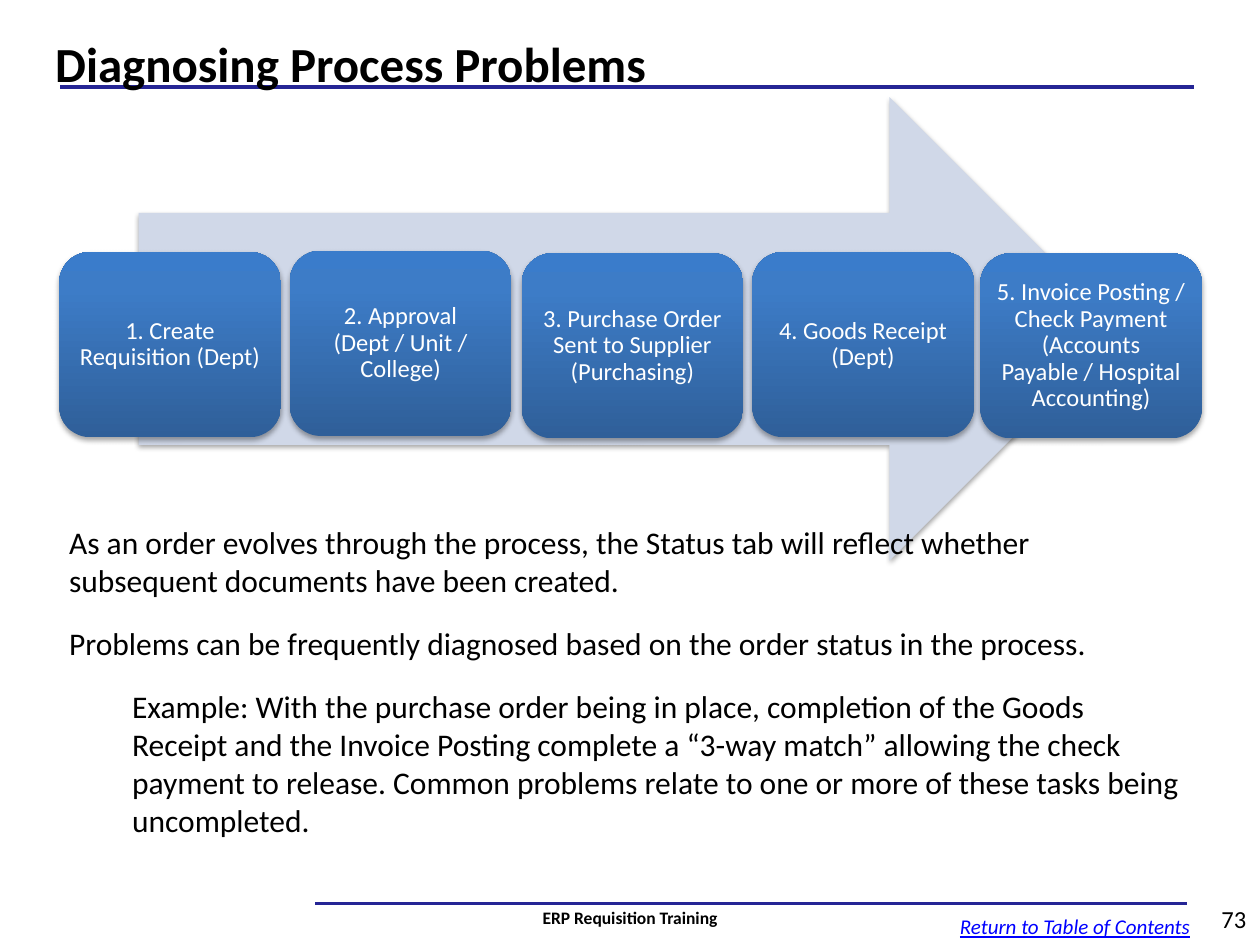
import copy

import lxml.etree
import pptx
import pptx.dml.color
import pptx.enum.shapes
import pptx.enum.text
import pptx.oxml.ns
import pptx.util

Inches = pptx.util.Inches
Pt = pptx.util.Pt
SHAPE = pptx.enum.shapes.MSO_SHAPE
ALIGN = pptx.enum.text.PP_ALIGN
ANCHOR = pptx.enum.text.MSO_ANCHOR

STEPS = [
    (0.47, 2.00, "1. Create Requisition (Dept)"),
    (2.30, 1.99, "2. Approval (Dept / Unit / College)"),
    (4.14, 2.01, "3. Purchase Order Sent to Supplier (Purchasing)"),
    (5.97, 2.00, "4. Goods Receipt (Dept)"),
    (7.78, 2.01, "5. Invoice Posting / Check Payment "
                 "(Accounts Payable / Hospital Accounting)"),
]
STEP_GRADIENT = [(0, "2F5F99"), (0.8, "3D7CC7"), (1, "3A7CCB")]
EXPLANATION = [
    ("As an order evolves through the process, the Status tab will reflect "
     "whether subsequent documents have been created.", 0),
    ("Problems can be frequently diagnosed based on the order status in the "
     "process.", 0),
    ("Example: With the purchase order being in place, completion of the Goods "
     "Receipt and the Invoice Posting complete a “3-way match” allowing the "
     "check payment to release. Common problems relate to one or more of these "
     "tasks being uncompleted.", 0.5),
]


def rgb(value):
    return pptx.dml.color.RGBColor.from_string(value)


def write(paragraph, text, size=18, color="000000", bold=False, italic=False,
          underline=False, align=ALIGN.LEFT, indent=0, before=0, spacing=None):
    if indent:
        paragraph._p.get_or_add_pPr().set("marL", str(Inches(indent)))
    paragraph.alignment = align
    paragraph.space_before = Pt(before)
    paragraph.line_spacing = spacing
    run = paragraph.add_run()
    run.text = text
    font = run.font
    font.name = "Calibri"
    font.size = Pt(size)
    font.bold = bold
    font.italic = italic
    font.underline = underline
    font.color.rgb = rgb(color)


def add_text(slide, box, text, anchor=ANCHOR.TOP, wrap=True, **style):
    frame = slide.shapes.add_textbox(*map(Inches, box)).text_frame
    frame.word_wrap = wrap
    frame.vertical_anchor = anchor
    write(frame.paragraphs[0], text, **style)
    return frame


def add_rule(slide, left, right, top, width):
    rule = slide.shapes.add_connector(
        pptx.enum.shapes.MSO_CONNECTOR.STRAIGHT,
        Inches(left), Inches(top), Inches(right), Inches(top))
    rule.line.color.rgb = rgb("252595")
    rule.line.width = Pt(width)
    lxml.etree.SubElement(rule._element.spPr, pptx.oxml.ns.qn("a:effectLst"))


def add_shadowed(slide, preset, box):
    shape = slide.shapes.add_shape(preset, *map(Inches, box))
    shape.line.fill.background()
    shape.shadow.inherit = False
    effects = shape._element.spPr.find(pptx.oxml.ns.qn("a:effectLst"))
    shadow = lxml.etree.SubElement(
        effects, pptx.oxml.ns.qn("a:outerShdw"), blurRad=str(Pt(3.1)),
        dist=str(Pt(1.8)), dir="5400000", rotWithShape="0")
    color = lxml.etree.SubElement(
        shadow, pptx.oxml.ns.qn("a:srgbClr"), val="000000")
    lxml.etree.SubElement(color, pptx.oxml.ns.qn("a:alpha"), val="35000")
    return shape


def add_arrow(slide):
    arrow = add_shadowed(slide, SHAPE.RIGHT_ARROW, (1.1, 0.77, 7.8, 3.68))
    arrow.fill.solid()
    arrow.fill.fore_color.rgb = rgb("D0D8E8")


def add_step(slide, left, top, text):
    step = add_shadowed(slide, SHAPE.ROUNDED_RECTANGLE, (left, top, 1.76, 1.47))
    step.fill.gradient()
    step.fill.gradient_angle = 90
    stops = next(step._element.spPr.iter(pptx.oxml.ns.qn("a:gsLst")))
    stops.append(copy.deepcopy(stops[0]))
    for stop, (position, color) in zip(step.fill.gradient_stops, STEP_GRADIENT):
        stop.position = position
        stop.color.rgb = rgb(color)
    frame = step.text_frame
    frame.word_wrap = True
    frame.vertical_anchor = ANCHOR.MIDDLE
    frame.margin_left = frame.margin_right = Inches(0.06)
    frame.margin_top = frame.margin_bottom = Inches(0.06)
    write(frame.paragraphs[0], text, size=14, color="FFFFFF",
          align=ALIGN.CENTER, spacing=0.9)


def add_explanation(slide):
    (opening, _), *others = EXPLANATION
    frame = add_text(slide, (0.45, 4.1, 9.05, 2.63), opening)
    for text, indent in others:
        write(frame.add_paragraph(), text, indent=indent, before=14.6)


def main():
    deck = pptx.Presentation()
    deck.slide_width = Inches(10)
    deck.slide_height = Inches(7.5)
    slide = deck.slides.add_slide(deck.slide_layouts[6])

    add_rule(slide, 0.48, 9.48, 0.69, 2.25)
    add_rule(slide, 2.5, 9.42, 7.17, 1.5)
    add_text(slide, (0.34, 0.1, 9.16, 0.8), "Diagnosing Process Problems",
             anchor=ANCHOR.MIDDLE, size=28, bold=True)
    add_arrow(slide)
    for left, top, text in STEPS:
        add_step(slide, left, top, text)
    add_explanation(slide)
    add_text(slide, (7.52, 7.2, 2.04, 0.3), "Return to Table of Contents",
             wrap=False, size=12, color="0000FF", italic=True, underline=True)
    add_text(slide, (9.39, 7.09, 0.6, 0.4), "73", anchor=ANCHOR.MIDDLE,
             size=14, align=ALIGN.RIGHT)
    add_text(slide, (2.01, 7.08, 5.98, 0.4), "ERP Requisition Training",
             anchor=ANCHOR.MIDDLE, size=10, bold=True, align=ALIGN.CENTER)
    deck.save("out.pptx")


if __name__ == "__main__":
    main()
